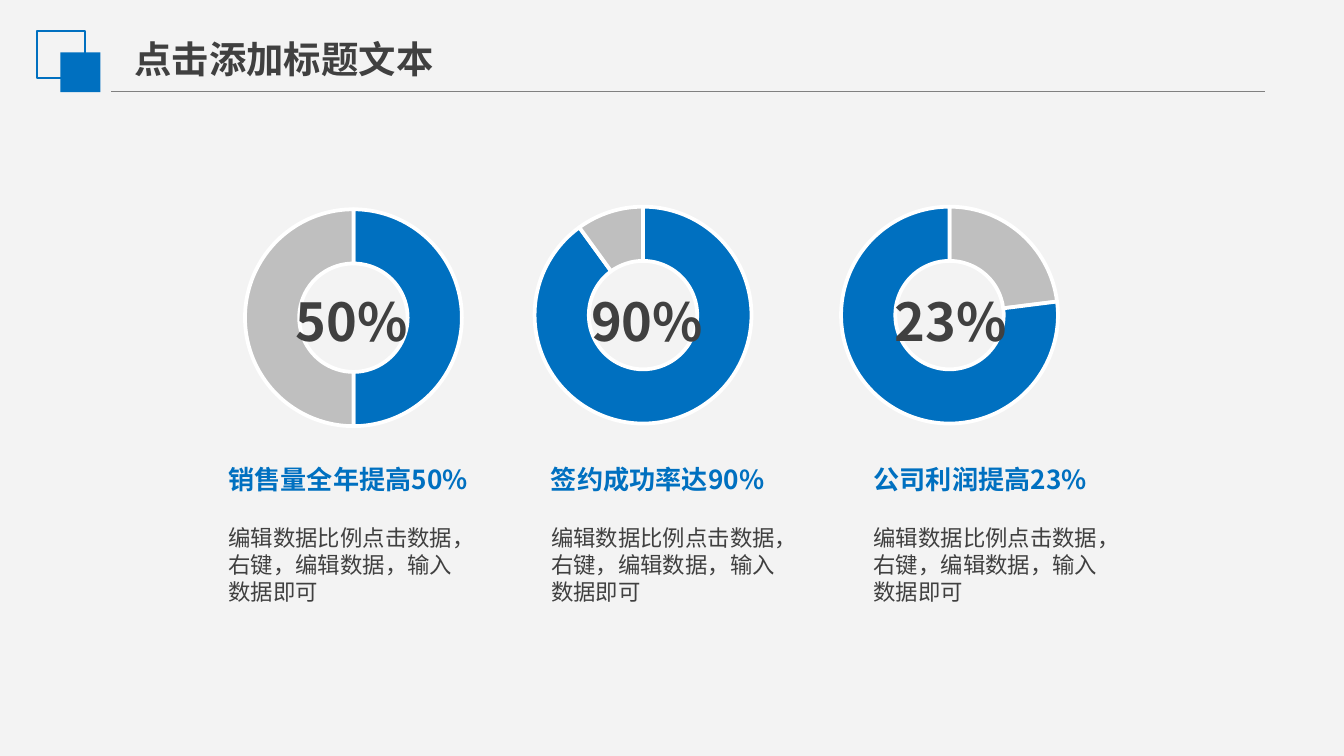
from lxml import etree
from pptx import Presentation
from pptx.chart.data import CategoryChartData
from pptx.dml.color import RGBColor
from pptx.enum.chart import XL_CHART_TYPE
from pptx.enum.shapes import MSO_CONNECTOR, MSO_SHAPE
from pptx.enum.text import MSO_ANCHOR, PP_ALIGN
from pptx.oxml.ns import qn
from pptx.util import Pt

DOUGHNUT = XL_CHART_TYPE.DOUGHNUT
STRAIGHT = MSO_CONNECTOR.STRAIGHT
RECTANGLE = MSO_SHAPE.RECTANGLE
TOP = MSO_ANCHOR.TOP
LEFT, CENTER = PP_ALIGN.LEFT, PP_ALIGN.CENTER

COLORS = {
    "background": "F3F3F3",
    "accent": "0070C0",
    "rest": "BFBFBF",
    "text": "404040",
    "rule": "808080",
    "gap": "FFFFFF",
    "chart_text": "000000",
}
TITLE_ONLY = 5
COLUMN_LEFT, COLUMN_STEP = 117.4, 172.8
BODY = "编辑数据比例点击数据，右键，编辑数据，输入数据即可"


def rgb(name):
    return RGBColor.from_string(COLORS[name])


class SlideBuilder:
    font_name = "Noto Sans CJK SC"
    chart_font = "Calibri"

    def __init__(self, slide):
        self.slide = slide
        slide.background.fill.solid()
        slide.background.fill.fore_color.rgb = rgb("background")

    def place(self, shape, box):
        for side, value in zip(("left", "top", "width", "height"), box):
            setattr(shape, side, Pt(value))

    def fill_text(self, shape, text, size, color="text", bold=False,
                  align=LEFT, wrap=True, margins=(7.2, 3.6)):
        frame = shape.text_frame
        across, down = margins
        frame_format = {
            "word_wrap": wrap, "vertical_anchor": TOP,
            "margin_left": Pt(across), "margin_right": Pt(across),
            "margin_top": Pt(down), "margin_bottom": Pt(down),
        }
        for name, value in frame_format.items():
            setattr(frame, name, value)
        paragraph = frame.paragraphs[0]
        paragraph.alignment = align
        paragraph.line_spacing = 1.0
        run = paragraph.add_run()
        run.text = text
        run_format = {"size": Pt(size), "bold": bold, "name": self.font_name}
        for name, value in run_format.items():
            setattr(run.font, name, value)
        run.font.color.rgb = rgb(color)
        east_asian = etree.SubElement(run.font._element, qn("a:ea"))
        east_asian.set("typeface", self.font_name)

    def title(self, text, box):
        title = self.slide.shapes.title
        self.place(title, box)
        self.fill_text(title, text, 20, bold=True, wrap=False)

    def text(self, text, box, size, **style):
        label = self.slide.shapes.add_textbox(*map(Pt, box))
        self.fill_text(label, text, size, **style)

    def square(self, left, top, side, filled):
        square = self.slide.shapes.add_shape(
            RECTANGLE, *map(Pt, (left, top, side, side)))
        square.shadow.inherit = False
        if filled:
            square.fill.solid()
            square.fill.fore_color.rgb = rgb("accent")
            square.line.fill.background()
        else:
            square.fill.background()
            square.line.color.rgb = rgb("accent")
            square.line.width = Pt(1)

    def rule(self, left, right, y):
        rule = self.slide.shapes.add_connector(
            STRAIGHT, *map(Pt, (left, y, right, y)))
        rule.line.color.rgb = rgb("rule")
        rule.line.width = Pt(0.75)
        etree.SubElement(rule._element.spPr, qn("a:effectLst"))

    def doughnut(self, box, values, colors):
        data = CategoryChartData()
        data.categories = ["1", "2", "3"]
        data.add_series("Series 1", values)
        chart = self.slide.shapes.add_chart(
            DOUGHNUT, *map(Pt, box), data).chart
        chart.has_title = False
        chart.has_legend = False
        chart.font.size = Pt(10)
        chart.font.name = self.chart_font
        chart.font.color.rgb = rgb("chart_text")
        plot = chart.plots[0]
        plot.vary_by_categories = True
        plot._element.find(qn("c:holeSize")).set("val", "75")
        for index, color in enumerate(colors):
            part = plot.series[0].points[index].format
            part.fill.solid()
            part.fill.fore_color.rgb = rgb(color)
            part.line.color.rgb = rgb("gap")
            part.line.width = Pt(2)


def main():
    deck = Presentation()
    deck.slide_width, deck.slide_height = Pt(720), Pt(405)
    page = SlideBuilder(deck.slides.add_slide(deck.slide_layouts[TITLE_ONLY]))

    page.rule(59.6, 677.6, 49.2)
    page.square(19.9, 16.4, 25.5, filled=False)
    page.square(32.4, 28, 21.4, filled=True)
    page.title("点击添加标题文本", (64.8, 15.8, 176.4, 31.7))

    done_first = ("accent", "accent", "rest")
    done_last = ("rest", "accent", "accent")
    # percentage, heading, chart left, top and width, label left, ring colours
    results = [
        (50, "销售量全年提高", 104.4, 102.2, 169.9, 150.5, done_first),
        (90, "签约成功率达", 231.1, 100.8, 226.8, 308.9, done_first),
        (23, "公司利润提高", 395.3, 100.8, 226.8, 471.6, done_last),
    ]
    for column, result in enumerate(results):
        percent, heading, left, top, width, label_left, colors = result
        page.doughnut((left, top, width, 136.1),
                      (percent, None, 100 - percent), colors)
        page.text(f"{percent}%", (label_left, 151.2, 75.6, 41), 28,
                  bold=True, align=CENTER, wrap=False)
        column_left = COLUMN_LEFT + column * COLUMN_STEP
        page.text(f"{heading}{percent}%", (column_left, 245.5, 155, 22.3), 14,
                  color="accent", bold=True, margins=(5, 2.9))
        page.text(BODY, (column_left, 280.8, 140.4, 36.7), 12, margins=(5, 0))

    deck.save("out.pptx")


if __name__ == "__main__":
    main()
